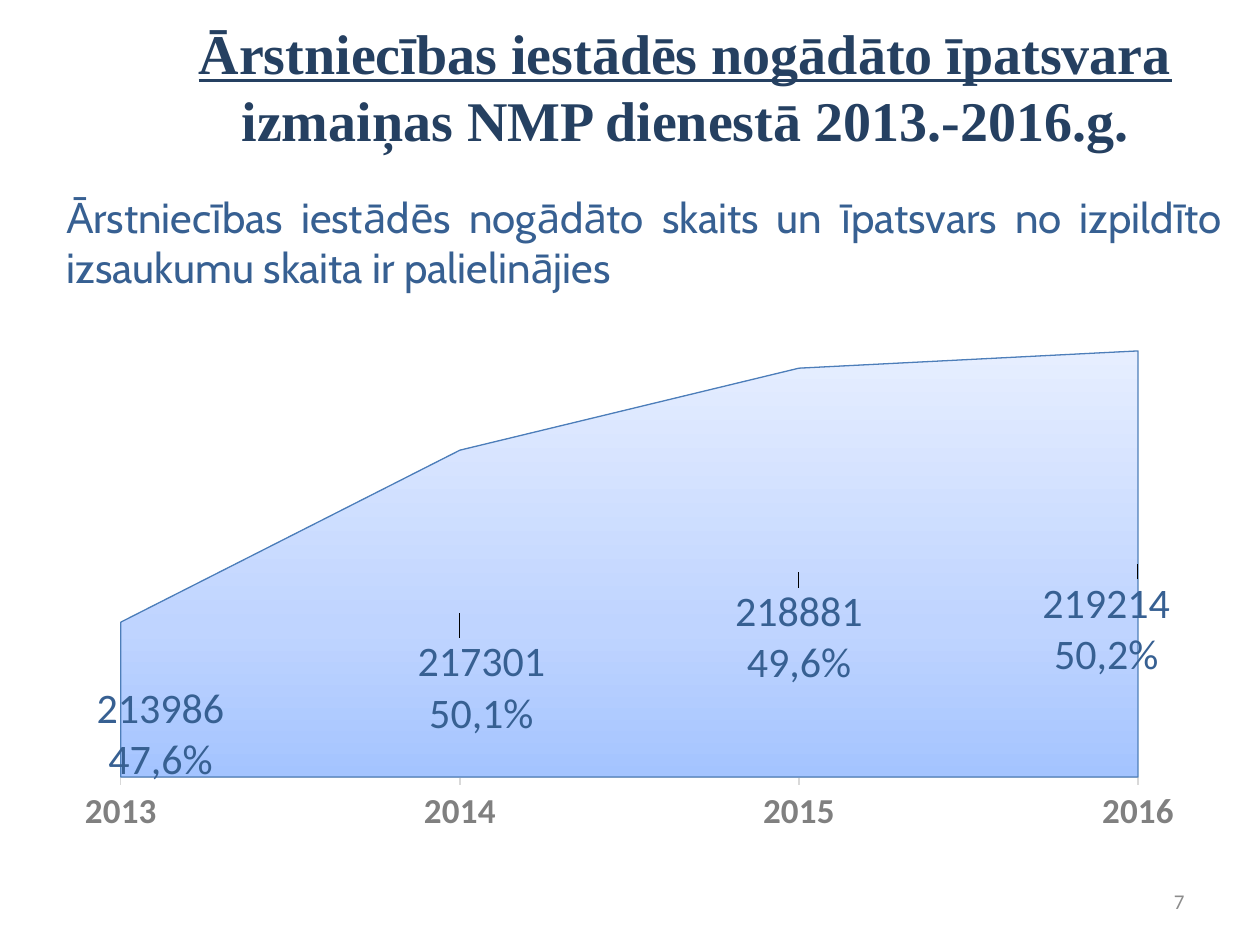
"""Build a slide with an area chart of patients taken to hospital, 2013-2016."""
import copy

import pptx
import pptx.chart.data
import pptx.dml.color
import pptx.enum.chart
import pptx.enum.text
import pptx.oxml
import pptx.oxml.ns
import pptx.util

Inches = pptx.util.Inches
Align = pptx.enum.text.PP_ALIGN
Anchor = pptx.enum.text.MSO_ANCHOR
qn = pptx.oxml.ns.qn


def rgb(value):
    return pptx.dml.color.RGBColor.from_string(value)


def write(para, text, size, color, font="Calibri", bold=False, underline=False, align=None):
    para.alignment = align
    span = para.add_run()
    span.text = text
    span.font.size = pptx.util.Pt(size)
    span.font.name = font
    span.font.bold = bold
    span.font.underline = underline
    span.font.color.rgb = rgb(color)


deck = pptx.Presentation()
deck.slide_width = Inches(10)
deck.slide_height = Inches(7.5)
page = deck.slides.add_slide(deck.slide_layouts[6])

frames = []
for left, top, width, height, anchor in [
    (1.38, 0.44, 8.12, 1.01, Anchor.MIDDLE),
    (0.43, 1.47, 9.37, 0.91, Anchor.TOP),
    (7.17, 6.95, 2.33, 0.4, Anchor.MIDDLE),
]:
    box = page.shapes.add_textbox(Inches(left), Inches(top), Inches(width), Inches(height))
    box.text_frame.word_wrap = True
    box.text_frame.vertical_anchor = anchor
    frames.append(box.text_frame)
title, intro, number = frames

title.margin_bottom = Inches(0.58)
heading = {"size": 32, "color": "254061", "font": "Times New Roman", "bold": True, "align": Align.CENTER}
write(title.paragraphs[0], "Ārstniecības iestādēs nogādāto īpatsvara ", underline=True, **heading)
write(title.paragraphs[0], "izmaiņas NMP dienestā 2013.-2016.g.", **heading)
write(
    intro.paragraphs[0],
    "Ārstniecības iestādēs nogādāto skaits un īpatsvars no izpildīto izsaukumu skaita ir palielinājies",
    24, "376092", font="Cabin", align=Align.JUSTIFY,
)
write(number.paragraphs[0], "7", 12, "8C8C8C", align=Align.RIGHT)

counts = [213986, 217301, 218881, 219214]
shares = ["47,6%", "50,1%", "49,6%", "50,2%"]
label_shifts = [(0.035, 0.066), (0.019, 0.138), (0, 0.121), (-0.028, 0.121)]

data = pptx.chart.data.CategoryChartData()
data.categories = ["2013", "2014", "2015", "2016"]
data.add_series("Series 1", counts)
chart = page.shapes.add_chart(
    pptx.enum.chart.XL_CHART_TYPE.AREA_STACKED,
    Inches(0.5), Inches(2.38), Inches(9), Inches(4.32), data,
).chart
chart.has_legend = False
chart.has_title = False
chart.font.name = "Calibri"
chart.font.size = pptx.util.Pt(10)
chart.font.color.rgb = rgb("000000")
chart.plots[0].vary_by_categories = False

years = chart.category_axis
years.has_major_gridlines = False
years.major_tick_mark = pptx.enum.chart.XL_TICK_MARK.OUTSIDE
years.format.line.color.rgb = rgb("D9D9D9")
years.format.line.width = pptx.util.Pt(0.75)
years.tick_labels.font.name = "Calibri"
years.tick_labels.font.size = pptx.util.Pt(20)
years.tick_labels.font.bold = True
years.tick_labels.font.color.rgb = rgb("808080")

values = chart.value_axis
values.has_major_gridlines = False
values.minimum_scale = 211000
values.maximum_scale = 220000
values.visible = False
for crossing in chart.element.iter(qn("c:crossBetween")):
    crossing.set("val", "midCat")

area = chart.plots[0].series[0]
area.format.line.color.rgb = rgb("4D7EB9")
area.format.line.width = pptx.util.Pt(0.75)
fill = area.format.fill
fill.gradient()
fill.gradient_angle = 90
stops = next(chart.element.iter(qn("a:gsLst")))
stops.append(copy.deepcopy(stops[0]))
for stop, (position, color) in zip(fill.gradient_stops, [(0, "A4C4FF"), (0.35, "BFD4FF"), (1, "E6EEFF")]):
    stop.position = position
    stop.color.rgb = rgb(color)


def manual_layout(**settings):
    items = "".join(f'<c:{key} val="{value}"/>' for key, value in settings.items())
    namespace = pptx.oxml.ns.nsdecls("c")
    return pptx.oxml.parse_xml(f"<c:layout {namespace}><c:manualLayout>{items}</c:manualLayout></c:layout>")


plot_area = next(chart.element.iter(qn("c:plotArea")))
for layout in plot_area.findall(qn("c:layout")):
    plot_area.remove(layout)
plot_area.insert(0, manual_layout(
    layoutTarget="inner", xMode="edge", yMode="edge", x=0.051, y=0.019, w=0.897, h=0.858,
))

for index, (count, share) in enumerate(zip(counts, shares)):
    label = area.points[index].data_label.text_frame
    write(label.paragraphs[0], str(count), 24, "376092")
    write(label.add_paragraph(), share, 24, "376092")
for entry, (x, y) in zip(chart.element.iter(qn("c:dLbl")), label_shifts):
    entry.find(qn("c:idx")).addnext(manual_layout(x=x, y=y))

area.data_labels.show_value = True
area.data_labels.font.name = "Calibri"
area.data_labels.font.size = pptx.util.Pt(24)
area.data_labels.font.bold = True
area.data_labels.font.color.rgb = rgb("376092")

deck.save("out.pptx")
